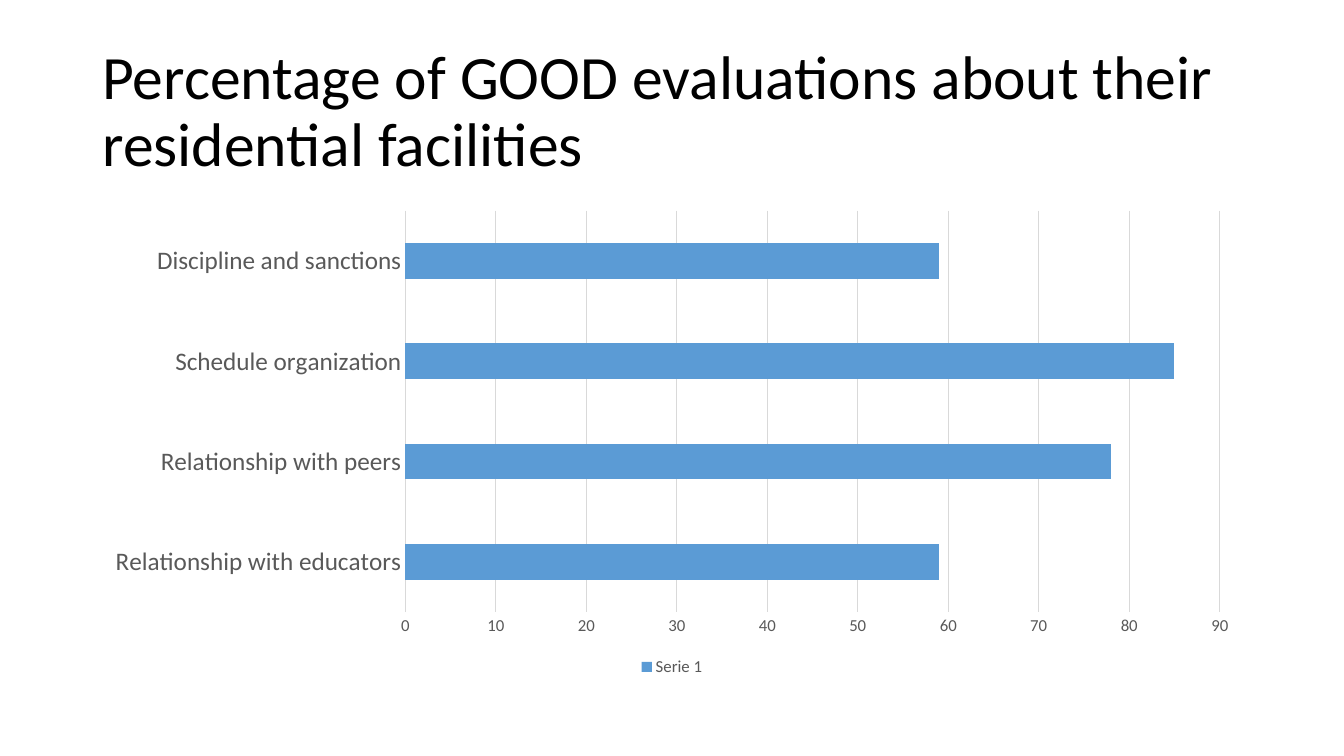
"""Build a slide with a bar chart of good evaluations of residential facilities."""
from pptx import Presentation
from pptx.chart.data import CategoryChartData
from pptx.dml.color import RGBColor
from pptx.enum.chart import XL_CHART_TYPE as ChartType
from pptx.enum.chart import XL_LEGEND_POSITION as LegendPosition
from pptx.enum.chart import XL_TICK_MARK as TickMark
from pptx.enum.text import MSO_ANCHOR as Anchor
from pptx.util import Cm, Pt

EVALUATIONS = {
    "Relationship with educators": 59,
    "Relationship with peers": 78,
    "Schedule organization": 85,
    "Discipline and sanctions": 59,
}


def color(value):
    return RGBColor.from_string(value)


class SlideBuilder:
    font_name = "Calibri"
    title_color = "000000"
    label_color = "595959"
    line_color = "D9D9D9"
    bar_color = "5B9BD5"

    def __init__(self, deck):
        self.slide = deck.slides.add_slide(deck.slide_layouts[6])

    def style_font(self, font, size, value):
        font.name = self.font_name
        font.size = Pt(size)
        font.color.rgb = color(value)

    def style_line(self, line):
        line.color.rgb = color(self.line_color)
        line.width = Pt(0.75)

    def add_title(self, text, left, top, width, height):
        box = self.slide.shapes.add_textbox(Cm(left), Cm(top), Cm(width), Cm(height))
        frame = box.text_frame
        frame.word_wrap = True
        frame.vertical_anchor = Anchor.MIDDLE
        frame.text = text
        para = frame.paragraphs[0]
        para.line_spacing = 0.9
        for span in para.runs:
            self.style_font(span.font, 44, self.title_color)

    def add_bar_chart(self, name, values, left, top, width, height):
        data = CategoryChartData()
        data.categories = list(values)
        data.add_series(name, list(values.values()))
        chart = self.slide.shapes.add_chart(
            ChartType.BAR_CLUSTERED, Cm(left), Cm(top), Cm(width), Cm(height), data
        ).chart
        self.style_font(chart.font, 10, self.title_color)
        chart.has_title = False
        self.style_plot(chart.plots[0])
        self.style_axes(chart.category_axis, chart.value_axis)
        chart.has_legend = True
        chart.legend.position = LegendPosition.BOTTOM
        chart.legend.include_in_layout = False
        self.style_font(chart.legend.font, 12, self.label_color)

    def style_plot(self, plot):
        plot.gap_width = 182
        plot.vary_by_categories = False
        fill = plot.series[0].format.fill
        fill.solid()
        fill.fore_color.rgb = color(self.bar_color)

    def style_axes(self, category_axis, value_axis):
        for axis, size in ((category_axis, 18), (value_axis, 12)):
            axis.major_tick_mark = TickMark.NONE
            axis.minor_tick_mark = TickMark.NONE
            self.style_font(axis.tick_labels.font, size, self.label_color)
        self.style_line(category_axis.format.line)
        value_axis.minimum_scale = 0
        value_axis.maximum_scale = 90
        value_axis.major_unit = 10
        value_axis.format.line.fill.background()
        value_axis.has_major_gridlines = True
        self.style_line(value_axis.major_gridlines.format.line)


def main():
    deck = Presentation()
    deck.slide_width = Cm(33.87)
    deck.slide_height = Cm(19.05)
    builder = SlideBuilder(deck)
    builder.add_title(
        "Percentage of GOOD evaluations about their residential facilities",
        2.33, 1.01, 29.21, 3.68,
    )
    builder.add_bar_chart("Serie 1", EVALUATIONS, 2.33, 5.07, 29.21, 12.09)
    deck.save("out.pptx")


if __name__ == "__main__":
    main()
